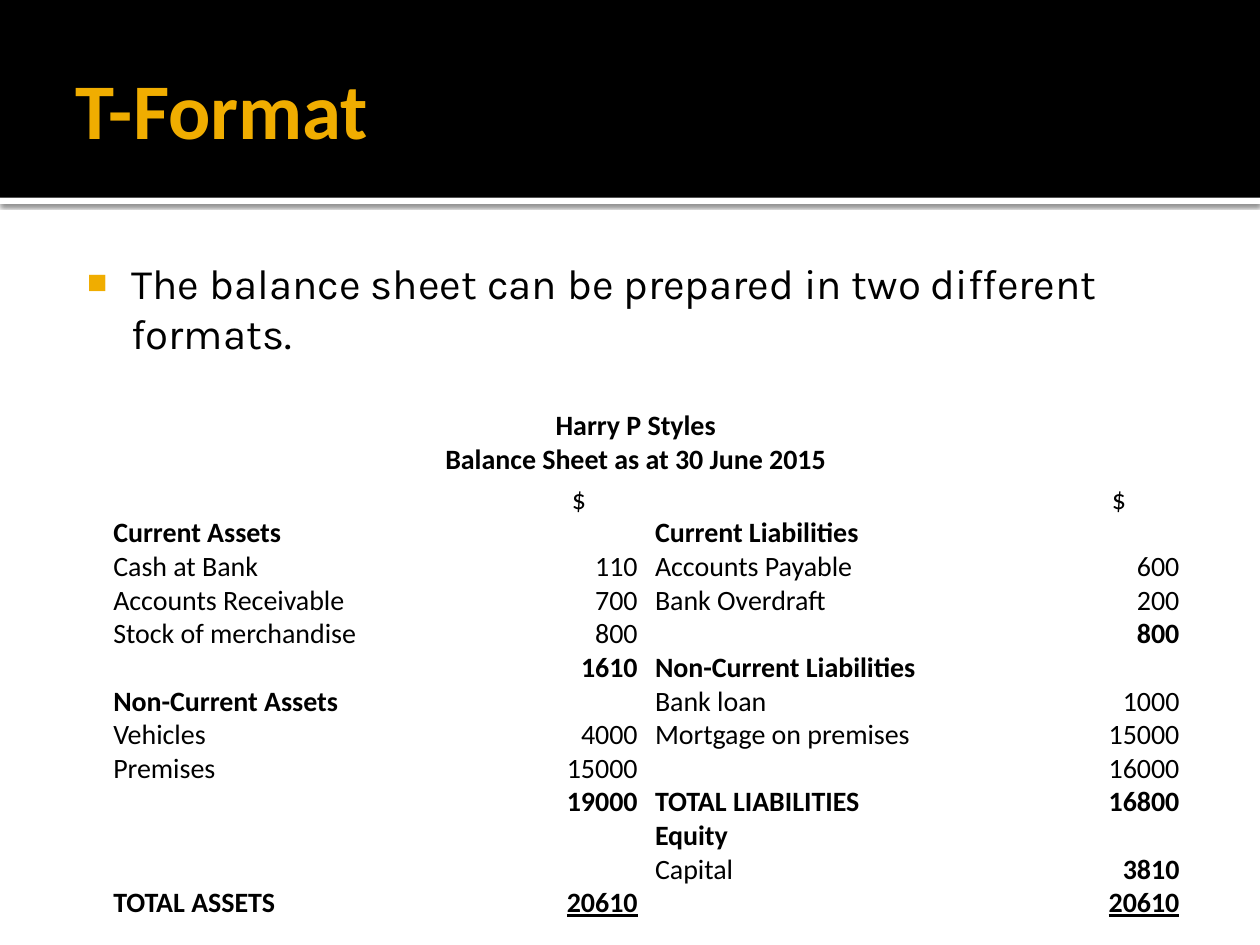
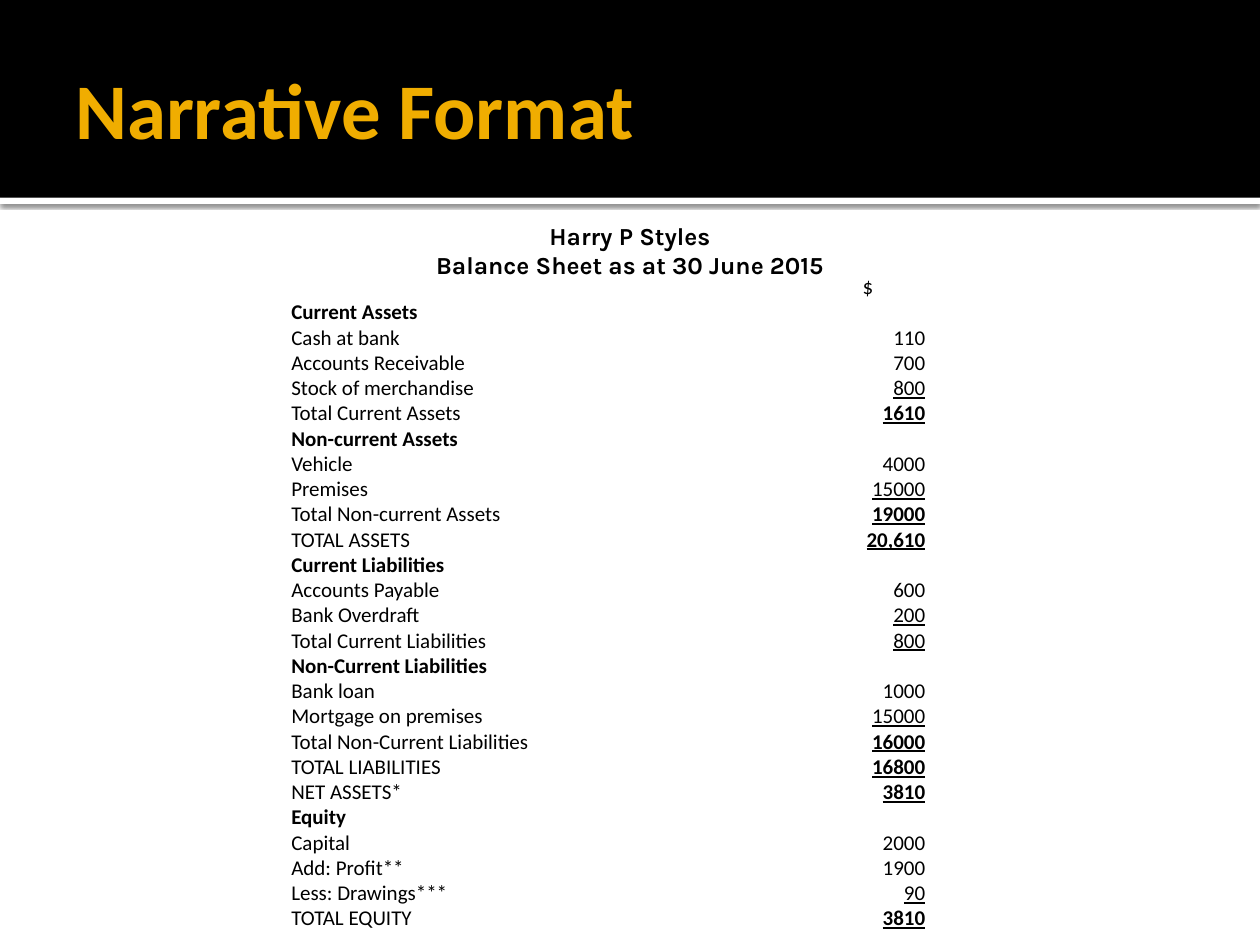
"""Builds two slides showing a balance sheet in T-format and in narrative format; # is bold, _ underlined."""
from lxml import etree
from pptx import Presentation
from pptx import util as u
from pptx.dml.color import RGBColor
from pptx.enum import shapes, text
from pptx.oxml import parse_xml
from pptx.oxml.ns import nsdecls, qn

Pt = u.Pt
COLOURS = {"band": "000000", "strip": "FFFFFF", "accent": "F0AD00", "ink": "000000"}
SHEET_HEADING = ["Harry P Styles", "Balance Sheet as at 30 June 2015"]

T_FORMAT = [
    ("", "$", "", "$"),
    ("#Current Assets", "", "#Current Liabilities", ""),
    ("Cash at Bank", "110", "Accounts Payable", "600"),
    ("Accounts Receivable", "700", "Bank Overdraft", "200"),
    ("Stock of merchandise", "800", "", "#800"),
    ("", "#1610", "#Non-Current Liabilities", ""),
    ("#Non-Current Assets", "", "Bank loan", "1000"),
    ("Vehicles", "4000", "Mortgage on premises", "15000"),
    ("Premises", "15000", "", "16000"),
    ("", "#19000", "#TOTAL LIABILITIES", "#16800"),
    ("", "", "#Equity", ""),
    ("", "", "Capital", "#3810"),
    ("#TOTAL ASSETS", "#_20610", "", "#_20610"),
]
NARRATIVE = [
    ("", "$"),
    ("#Current Assets", ""),
    ("Cash at bank", "110"),
    ("Accounts Receivable", "700"),
    ("Stock of merchandise", "_800"),
    ("Total Current Assets", "#_1610"),
    ("#Non-current Assets", ""),
    ("Vehicle", "4000"),
    ("Premises", "_15000"),
    ("Total Non-current Assets", "#_19000"),
    ("TOTAL ASSETS", "#_20,610"),
    ("#Current Liabilities", ""),
    ("Accounts Payable", "600"),
    ("Bank Overdraft", "_200"),
    ("Total Current Liabilities", "_800"),
    ("#Non-Current Liabilities", ""),
    ("Bank loan", "1000"),
    ("Mortgage on premises", "_15000"),
    ("Total Non-Current Liabilities", "#_16000"),
    ("TOTAL LIABILITIES", "#_16800"),
    ("NET ASSETS*", "#_3810"),
    ("#Equity", ""),
    ("Capital", "2000"),
    ("Add: Profit**", "1900"),
    ("Less: Drawings***", "_90"),
    ("TOTAL EQUITY", "#_3810"),
]
SHEETS = [
    ("T-Format", T_FORMAT, (59.76, 275.76), (232.56, 77.04, 230.4, 79.2), 19.2, 16),
    ("Narrative Format", NARRATIVE, (161.5, 156.96), (296.64, 75.6), 14.4, 12),
]


def style(paragraph, size, font="Calibri", colour="ink", bold=False, align=text.PP_ALIGN.LEFT):
    paragraph.alignment = align
    paragraph.font.name = font
    paragraph.font.size = Pt(size)
    paragraph.font.bold = bold
    paragraph.font.color.rgb = RGBColor.from_string(COLOURS[colour])


def add_frame(slide, place, insets):
    frame = slide.shapes.add_textbox(*map(Pt, place)).text_frame
    frame.word_wrap = True
    frame.margin_left, frame.margin_top, frame.margin_right, frame.margin_bottom = map(Pt, insets)
    return frame


deck = Presentation()
deck.slide_width, deck.slide_height = Pt(720), Pt(540)
slides = []

for title, entries, corner, widths, row_height, size in SHEETS:
    slide = deck.slides.add_slide(deck.slide_layouts[6])
    slides.append(slide)

    for part, top, height in (("strip", 113, 3.6), ("band", 0, 113)):
        bar = slide.shapes.add_shape(shapes.MSO_SHAPE.RECTANGLE, 0, Pt(top), Pt(720), Pt(height))
        bar.fill.solid()
        bar.fill.fore_color.rgb = RGBColor.from_string(COLOURS[part])
        bar.line.fill.background()
        bar.shadow.inherit = False
        if part == "strip":
            bar._element.spPr.find(qn("a:effectLst")).append(parse_xml(
                f'<a:outerShdw {nsdecls("a")} blurRad="{Pt(2.5)}" dist="{Pt(0.8)}" dir="5400000">'
                '<a:srgbClr val="000000"><a:alpha val="60000"/></a:srgbClr></a:outerShdw>'))

    heading = add_frame(slide, (36, 12.24, 648, 98.64), (7.2, 3.6, 3.6, 3.6))
    heading.vertical_anchor = text.MSO_ANCHOR.MIDDLE
    heading.text = title
    style(heading.paragraphs[0], 45, colour="accent", bold=True)

    sheet = slide.shapes.add_table(len(entries), len(widths), *map(Pt, corner), Pt(sum(widths)),
                                   Pt(row_height * len(entries))).table
    sheet.first_row = sheet.horz_banding = False
    for column, width in zip(sheet.columns, widths):
        column.width = Pt(width)
    for row, row_entries in enumerate(entries):
        sheet.rows[row].height = Pt(row_height)
        for col, entry in enumerate(row_entries):
            cell = sheet.cell(row, col)
            cell.fill.background()
            cell.margin_left = cell.margin_right = Pt(5)
            cell.margin_top = cell.margin_bottom = 0
            wording = entry.lstrip("#_")
            align = text.PP_ALIGN.RIGHT if col % 2 else text.PP_ALIGN.LEFT
            if wording == "$":
                align = text.PP_ALIGN.CENTER
            if wording:
                cell.text = wording
            line = cell.text_frame.paragraphs[0]
            style(line, size, bold="#" in entry, align=align)
            line.font.underline = "_" in entry
            if not wording:
                etree.SubElement(line._p, qn("a:endParaRPr"), sz=str(size * 100))

t_slide, narrative_slide = slides

intro = add_frame(t_slide, (36, 139.68, 648, 364.32), (4.3, 7.2, 7.2, 3.6))
intro.text = "\n".join(["The balance sheet can be prepared in two different formats."] + SHEET_HEADING)
statement, *sheet_lines = intro.paragraphs
style(statement, 24, font="Karla")
bullet = statement._p.get_or_add_pPr()
bullet.set("marL", str(Pt(34.9)))
bullet.set("indent", str(Pt(-25.4)))
for position, mark in enumerate((
        f'<a:buClr {nsdecls("a")}><a:srgbClr val="{COLOURS["accent"]}"/></a:buClr>',
        f'<a:buSzPct {nsdecls("a")} val="80000"/>',
        f'<a:buFont {nsdecls("a")} typeface="Arial"/>',
        f'<a:buChar {nsdecls("a")} char="■"/>')):
    bullet.insert(position, parse_xml(mark))
for line in sheet_lines:
    style(line, 16, bold=True, align=text.PP_ALIGN.CENTER)
    line._p.get_or_add_pPr().set("marL", str(Pt(9.4)))
sheet_lines[0].space_before = Pt(28.7)

caption = add_frame(narrative_slide, (180, 122.6, 360, 41), (7.2, 3.6, 7.2, 3.6))
caption.text = "\n".join(SHEET_HEADING)
for line in caption.paragraphs:
    style(line, 14, font="Karla", bold=True, align=text.PP_ALIGN.CENTER)

deck.save("out.pptx")
